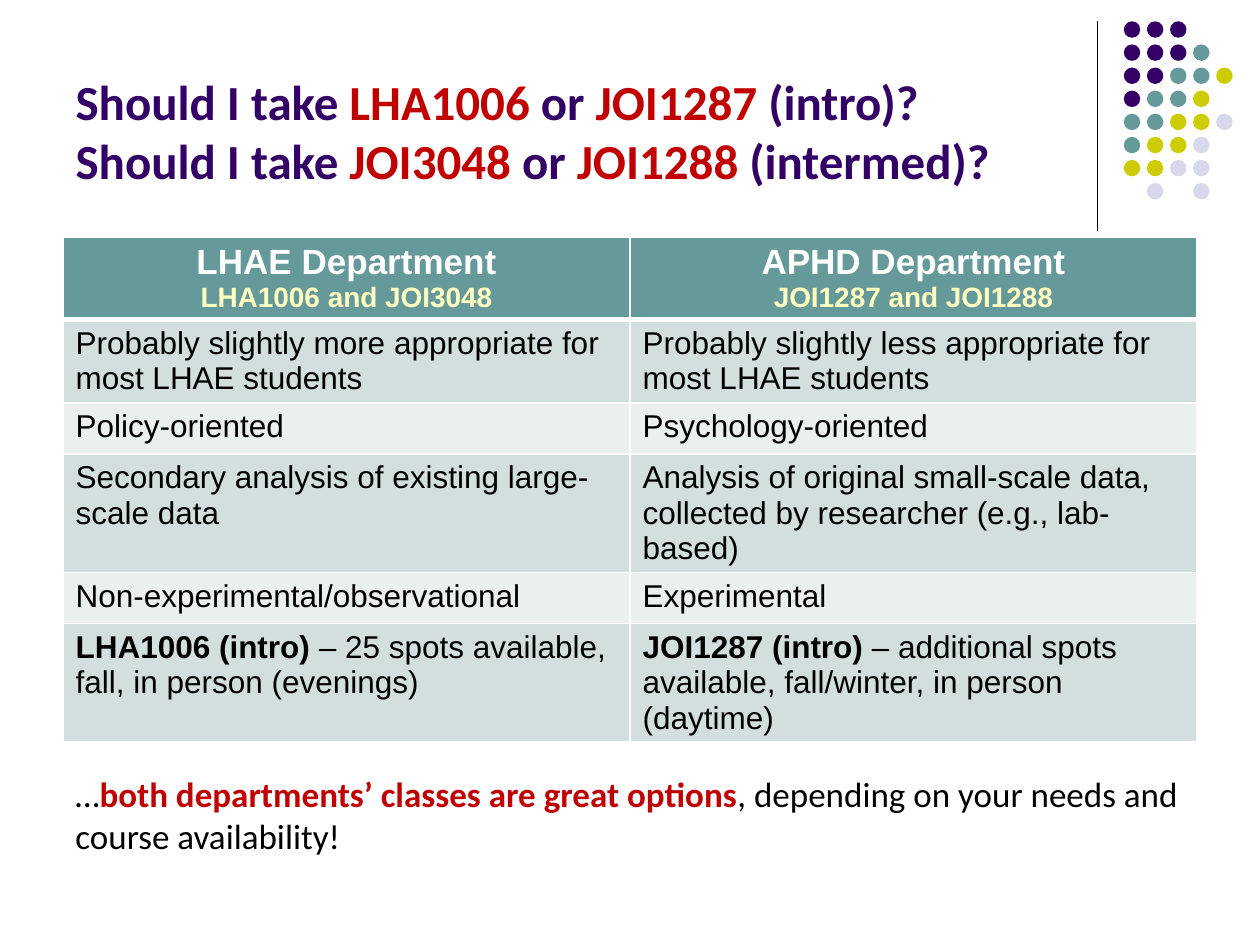
"""Build the slide comparing the course options of two departments."""
from dataclasses import dataclass

from lxml import etree
from pptx import Presentation
from pptx.dml.color import RGBColor
from pptx.enum.shapes import MSO_CONNECTOR, MSO_SHAPE
from pptx.enum.text import MSO_ANCHOR, MSO_AUTO_SIZE, PP_ALIGN
from pptx.oxml.ns import qn
from pptx.util import Pt

LEFT, CENTER = PP_ALIGN.LEFT, PP_ALIGN.CENTER
STRAIGHT, OVAL = MSO_CONNECTOR.STRAIGHT, MSO_SHAPE.OVAL
BOTTOM, NO_FIT = MSO_ANCHOR.BOTTOM, MSO_AUTO_SIZE.NONE


@dataclass(frozen=True)
class Theme:
    head_font: str = "Calibri"
    body_font: str = "Arial"
    purple: str = "330066"
    teal: str = "669999"
    olive: str = "CCCC00"
    lilac: str = "D8D8EC"
    red: str = "C00000"
    cream: str = "FFFFC2"
    white: str = "FFFFFF"
    black: str = "000000"
    band_dark: str = "D3DEDE"
    band_light: str = "EAEFEF"
    title_size: int = 28
    header_size: int = 20
    courses_size: int = 16
    cell_size: int = 18
    note_size: int = 20


T = Theme()

TITLE = [
    [("Should I take ", T.purple), ("LHA1006", T.red), (" or ", T.purple),
     ("JOI1287 ", T.red), ("(intro)?", T.purple)],
    [("Should I take ", T.purple), ("JOI3048", T.red), (" or ", T.purple),
     ("JOI1288 ", T.red), ("(intermed)?", T.purple)],
]
HEADERS = [
    ("LHAE Department", "LHA1006 and JOI3048"),
    ("APHD Department", "JOI1287 and JOI1288"),
]
ROWS = [
    (("", "Probably slightly more appropriate for most LHAE students"),
     ("", "Probably slightly less appropriate for most LHAE students")),
    (("", "Policy-oriented"), ("", "Psychology-oriented")),
    (("", "Secondary analysis of existing large-scale data"),
     ("", "Analysis of original small-scale data, collected by researcher (e.g., lab-based)")),
    (("", "Non-experimental/observational"), ("", "Experimental")),
    (("LHA1006 (intro) ", "– 25 spots available, fall, in person (evenings)"),
     ("JOI1287 (intro) ", "– additional spots available, fall/winter, in person (daytime)")),
]
NOTE = [
    ("…", T.black, False),
    ("both departments’ classes are great options", T.red, True),
    (", depending on your needs and course availability!", T.black, False),
]
DOTS = ["PPP", "PPPT", "PPTTO", "PTTO", "TTOOL", "TOOL", "OOLL", " L L"]
DOT_COLORS = {"P": T.purple, "T": T.teal, "O": T.olive, "L": T.lilac}
DOT_LEFT, DOT_TOP, DOT_SIZE, DOT_PITCH = 642.2, 12.2, 9.4, 13.2

MARGIN, CONTENT_W = 36, 648
TABLE_TOP, ROW_H = 135.4, 29.2


def rgb(value):
    return RGBColor.from_string(value)


def add_run(p, text, font, size, color, bold=False):
    r = p.add_run()
    r.text = text
    r.font.name, r.font.size, r.font.bold = font, Pt(size), bold
    r.font.color.rgb = rgb(color)


def add_divider(s):
    line = s.shapes.add_connector(STRAIGHT, Pt(627), Pt(12), Pt(627), Pt(132))
    line.line.color.rgb = rgb(T.black)
    line.line.width = Pt(0.75)
    etree.SubElement(line._element.spPr, qn("a:effectLst"))


def add_dots(s):
    group = s.shapes.add_group_shape()
    for row, codes in enumerate(DOTS):
        for col, code in enumerate(codes):
            if code == " ":
                continue
            dot = group.shapes.add_shape(
                OVAL, Pt(DOT_LEFT + col * DOT_PITCH), Pt(DOT_TOP + row * DOT_PITCH),
                Pt(DOT_SIZE), Pt(DOT_SIZE))
            dot.shadow.inherit = False
            dot.fill.solid()
            dot.fill.fore_color.rgb = rgb(DOT_COLORS[code])
            dot.line.fill.background()


def add_title(s):
    sp = s.shapes.title
    sp.left, sp.top, sp.width, sp.height = Pt(MARGIN), Pt(9.4), Pt(594), Pt(102.2)
    tf = sp.text_frame
    tf.word_wrap, tf.auto_size, tf.vertical_anchor = True, NO_FIT, BOTTOM
    p = tf.paragraphs[0]
    p.alignment = LEFT
    for i, line in enumerate(TITLE):
        if i:
            p.add_line_break()
        for text, color in line:
            add_run(p, text, T.head_font, T.title_size, color, True)


def style_cell(cell, fill, top=1, bottom=1):
    tc_pr = cell._tc.get_or_add_tcPr()
    for side, width in (("L", 1), ("R", 1), ("T", top), ("B", bottom)):
        ln = etree.SubElement(tc_pr, qn(f"a:ln{side}"), w=str(Pt(width)))
        solid = etree.SubElement(ln, qn("a:solidFill"))
        etree.SubElement(solid, qn("a:srgbClr"), val=T.white)
    cell.fill.solid()
    cell.fill.fore_color.rgb = rgb(fill)


def add_comparison(s):
    n_rows, n_cols = len(ROWS) + 1, len(HEADERS)
    table = s.shapes.add_table(n_rows, n_cols, Pt(MARGIN), Pt(TABLE_TOP),
                               Pt(CONTENT_W), Pt(ROW_H * n_rows)).table
    for row in table.rows:
        row.height = Pt(ROW_H)
    for col, (department, courses) in enumerate(HEADERS):
        cell = table.cell(0, col)
        style_cell(cell, T.teal, bottom=3)
        tf = cell.text_frame
        p, sub = tf.paragraphs[0], tf.add_paragraph()
        p.alignment = sub.alignment = CENTER
        add_run(p, department, T.body_font, T.header_size, T.white, True)
        add_run(sub, courses, T.body_font, T.courses_size, T.cream, True)
    for i, row in enumerate(ROWS, 1):
        for col, (lead, text) in enumerate(row):
            cell = table.cell(i, col)
            style_cell(cell, T.band_dark if i % 2 else T.band_light, top=3 if i == 1 else 1)
            p = cell.text_frame.paragraphs[0]
            if lead:
                add_run(p, lead, T.body_font, T.cell_size, T.black, True)
            add_run(p, text, T.body_font, T.cell_size, T.black)


def add_note(s):
    tf = s.shapes.add_textbox(Pt(MARGIN), Pt(437.8), Pt(CONTENT_W), Pt(50.4)).text_frame
    tf.word_wrap = True
    p = tf.paragraphs[0]
    p.space_before = Pt(4)
    for text, color, bold in NOTE:
        add_run(p, text, T.head_font, T.note_size, color, bold)


def main():
    prs = Presentation()
    prs.slide_width, prs.slide_height = Pt(720), Pt(540)
    s = prs.slides.add_slide(prs.slide_layouts[5])
    add_divider(s)
    add_dots(s)
    add_title(s)
    add_comparison(s)
    add_note(s)
    prs.save("out.pptx")


if __name__ == "__main__":
    main()
